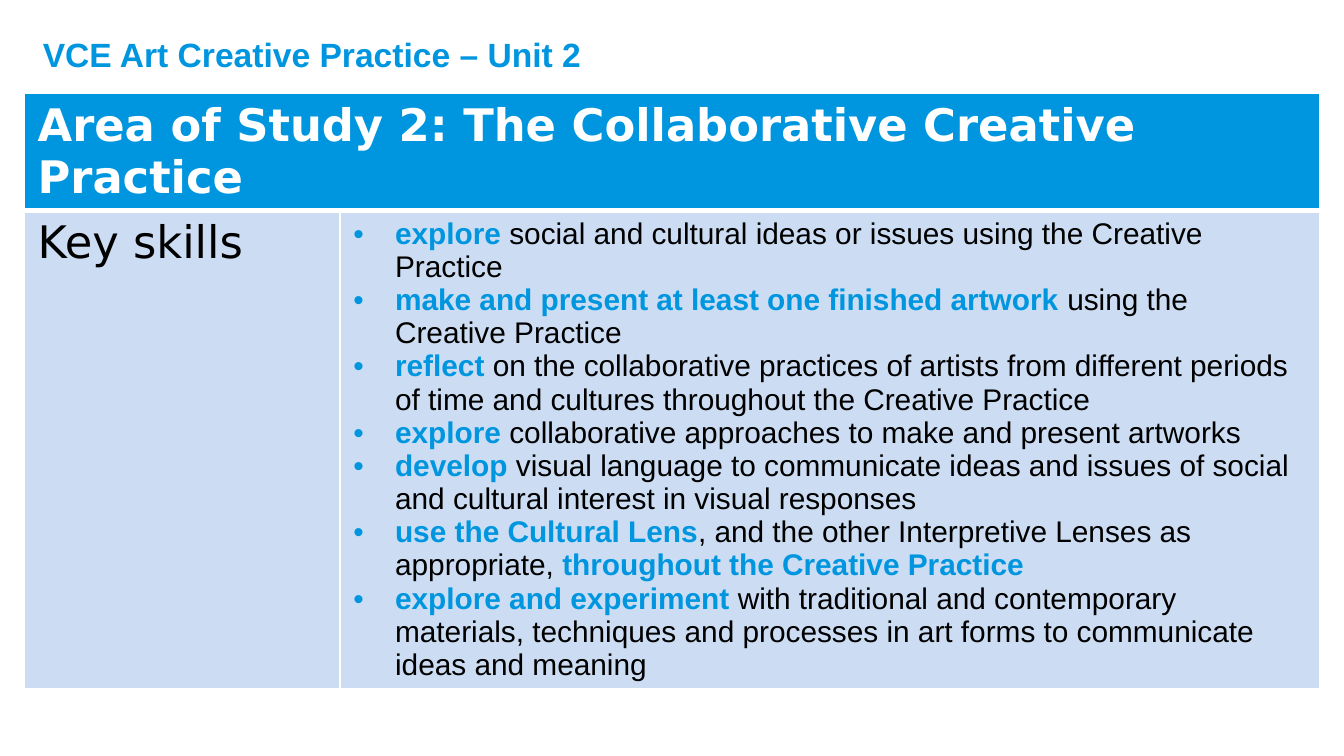
from dataclasses import dataclass

from lxml.etree import SubElement
from pptx import Presentation
from pptx.dml.color import RGBColor
from pptx.enum.text import MSO_AUTO_SIZE
from pptx.oxml import parse_xml
from pptx.oxml.ns import nsdecls, qn
from pptx.util import Inches, Pt


@dataclass(frozen=True)
class Theme:
    """Colours, fonts and type sizes of the slide."""
    blue: str = "0096DF"
    pale: str = "CCDDF3"
    white: str = "FFFFFF"
    black: str = "000000"
    body_font: str = "Arial"
    heading_font: str = "DejaVu Sans"
    title_size: int = 18
    heading_size: int = 24
    body_size: int = 16


THEME = Theme()
TITLE = "VCE Art Creative Practice – Unit 2"
HEADING = "Area of Study 2: The Collaborative Creative Practice"
LABEL = "Key skills"
COLUMN_WIDTHS = (2.35, 7.29)
ROW_HEIGHTS = (0.41, 3.21)
BULLET_INDENT = 0.31
SKILLS = (
    (("explore", True),
     (" social and cultural ideas or issues using the Creative Practice", False)),
    (("make and present at least one finished artwork ", True),
     ("using the Creative Practice", False)),
    (("reflect", True),
     (" on the collaborative practices of artists from different periods of time"
      " and cultures throughout the Creative Practice", False)),
    (("explore ", True),
     ("collaborative approaches to make and present artworks", False)),
    (("develop", True),
     (" visual language to communicate ideas and issues of social and cultural"
      " interest in visual responses", False)),
    (("use the Cultural Lens", True),
     (", and the other Interpretive Lenses as appropriate, ", False),
     ("throughout the Creative Practice", True)),
    (("explore and experiment", True),
     (" with traditional and contemporary materials, techniques and processes in"
      " art forms to communicate ideas and meaning", False)),
)


def add_run(paragraph, text, color, **font_format):
    """Append a run with the given colour and font attributes."""
    run = paragraph.add_run()
    run.text = text
    run.font.color.rgb = RGBColor.from_string(color)
    for name, value in font_format.items():
        setattr(run.font, name, value)


def add_bullet(paragraph):
    """Give a paragraph a hanging bullet."""
    properties = paragraph._p.get_or_add_pPr()
    indent = Inches(BULLET_INDENT)
    properties.set("marL", str(indent))
    properties.set("indent", str(-indent))
    SubElement(properties, qn("a:buFont"), typeface=THEME.body_font)
    SubElement(properties, qn("a:buChar"), char="•")


def style_cell(cell, fill, bottom_width=1):
    """Fill a cell and draw its white borders."""
    cell.fill.solid()
    cell.fill.fore_color.rgb = RGBColor.from_string(fill)
    widths = {"lnL": 1, "lnR": 1, "lnT": 1, "lnB": bottom_width}
    for position, (tag, width) in enumerate(widths.items()):
        border = parse_xml(
            f'<a:{tag} {nsdecls("a")} w="{Pt(width)}"><a:solidFill>'
            f'<a:srgbClr val="{THEME.white}"/></a:solidFill></a:{tag}>')
        cell._tc.get_or_add_tcPr().insert(position, border)


def add_title(slide, left, top, width, height):
    """Place the unit title."""
    box = slide.shapes.add_textbox(*map(Inches, (left, top, width, height)))
    frame = box.text_frame
    frame.word_wrap = True
    frame.auto_size = MSO_AUTO_SIZE.SHAPE_TO_FIT_TEXT
    add_run(frame.paragraphs[0], TITLE, THEME.blue, name=THEME.body_font,
            size=Pt(THEME.title_size), bold=True)


def fill_skills(frame):
    """Write the bulleted key skills with their highlighted words."""
    for index, skill in enumerate(SKILLS):
        paragraph = frame.add_paragraph() if index else frame.paragraphs[0]
        add_bullet(paragraph)
        for text, highlighted in skill:
            add_run(paragraph, text, THEME.blue if highlighted else THEME.black,
                    name=THEME.body_font, size=Pt(THEME.body_size), bold=highlighted)


def add_skills_table(slide, left, top, width, height):
    """Place the area of study table."""
    frame = slide.shapes.add_table(2, 2, *map(Inches, (left, top, width, height)))
    table = frame.table
    for column, column_width in zip(table.columns, COLUMN_WIDTHS):
        column.width = Inches(column_width)
    for row, row_height in zip(table.rows, ROW_HEIGHTS):
        row.height = Inches(row_height)
    frame.width, frame.height = Inches(width), Inches(height)
    table.cell(0, 0).merge(table.cell(0, 1))
    for column in range(2):
        style_cell(table.cell(0, column), THEME.blue, bottom_width=3)
        style_cell(table.cell(1, column), THEME.pale)
    headings = ((HEADING, THEME.white, True), (LABEL, THEME.black, False))
    for row, (text, color, bold) in enumerate(headings):
        add_run(table.cell(row, 0).text_frame.paragraphs[0], text, color,
                name=THEME.heading_font, size=Pt(THEME.heading_size), bold=bold)
    fill_skills(table.cell(1, 1).text_frame)


def main():
    """Build and save the presentation."""
    presentation = Presentation()
    presentation.slide_width = Inches(10)
    presentation.slide_height = Inches(10 * 9 / 16)
    slide = presentation.slides.add_slide(presentation.slide_layouts[6])
    add_skills_table(slide, 0.18, 0.69, 9.65, 4.24)
    add_title(slide, 0.22, 0.2, 7.59, 0.4)
    presentation.save("out.pptx")


if __name__ == "__main__":
    main()
